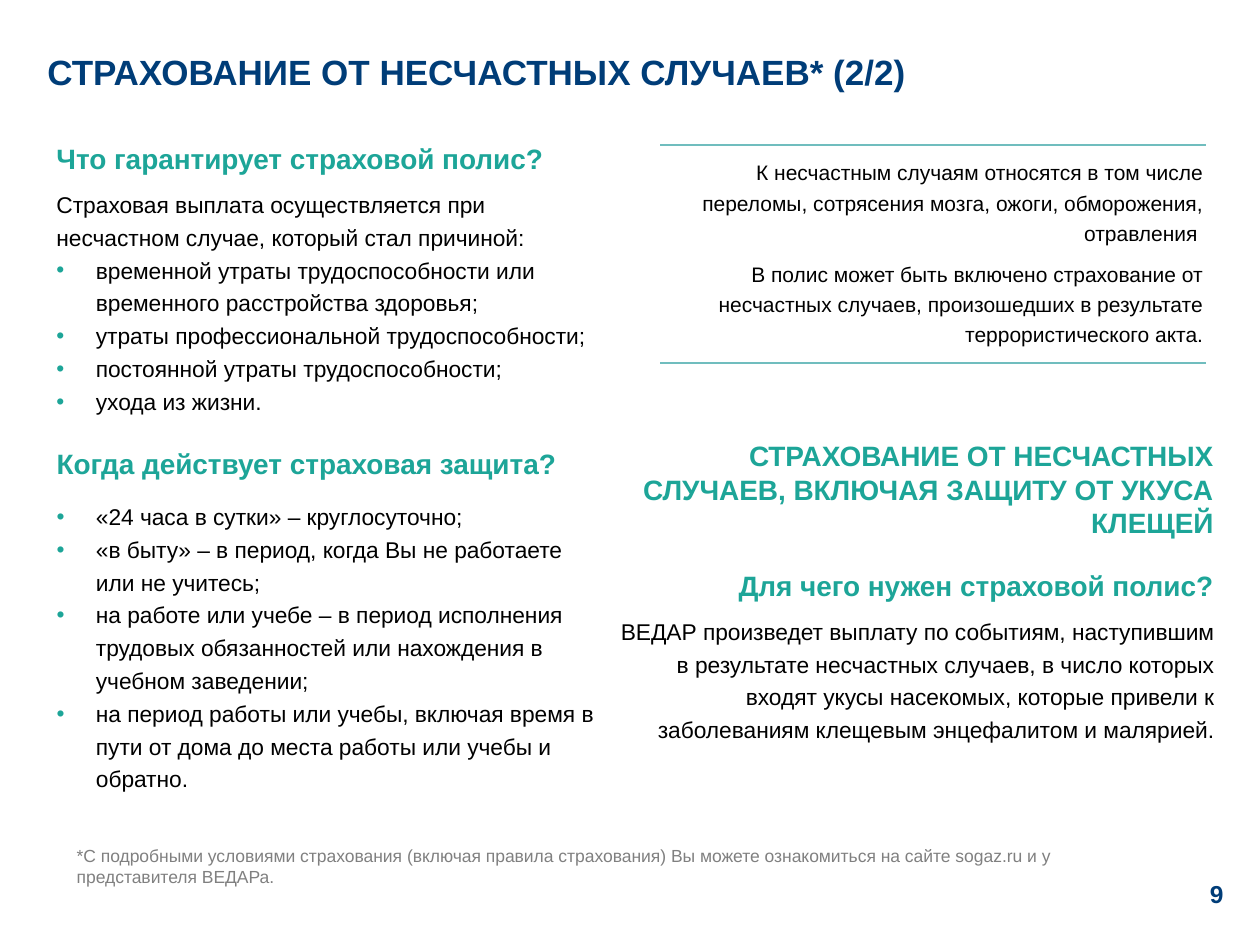
from pptx import Presentation
from pptx.dml.color import RGBColor
from pptx.enum.shapes import MSO_CONNECTOR
from pptx.enum.text import MSO_ANCHOR, PP_ALIGN
from pptx.oxml.ns import qn
from pptx.util import Pt
from lxml import etree

LEFT, RIGHT = PP_ALIGN.LEFT, PP_ALIGN.RIGHT
TOP, MIDDLE = MSO_ANCHOR.TOP, MSO_ANCHOR.MIDDLE
STRAIGHT = MSO_CONNECTOR.STRAIGHT

COLORS = {
    "navy": "003D78",
    "teal": "1DA598",
    "rule": "70BDBE",
    "text": "000000",
    "note": "808080",
}


class SlideWriter:
    font_name = "Arial"
    bullet_indent = 22.5
    loose = 1.2

    def __init__(self, slide):
        self.slide = slide

    def text_box(self, left, top, width, height, anchor=TOP):
        frame = self.slide.shapes.add_textbox(
            Pt(left), Pt(top), Pt(width), Pt(height)).text_frame
        frame.word_wrap = True
        frame.vertical_anchor = anchor
        return frame

    def paragraph(self, frame, text, size, color, bold=False, align=LEFT,
                  spacing=1.0, before=0, after=0, bullet=False):
        """Fill the empty first paragraph of the frame, or append a new one."""
        first = frame.paragraphs[0]
        paragraph = frame.add_paragraph() if first.runs else first
        paragraph.add_run().text = text
        if bullet:
            self.add_bullet(paragraph)
        paragraph.alignment = align
        paragraph.line_spacing = spacing
        paragraph.space_before = Pt(before)
        paragraph.space_after = Pt(after)
        font = paragraph.font
        font.name, font.size, font.bold = self.font_name, Pt(size), bold
        font.color.rgb = RGBColor.from_string(COLORS[color])

    def add_bullet(self, paragraph):
        properties = paragraph._p.get_or_add_pPr()
        indent = Pt(self.bullet_indent)
        properties.set("marL", str(indent))
        properties.set("indent", str(-indent))
        bullet_color = etree.SubElement(properties, qn("a:buClr"))
        etree.SubElement(bullet_color, qn("a:srgbClr"), val=COLORS["teal"])
        etree.SubElement(properties, qn("a:buFont"), typeface=self.font_name)
        etree.SubElement(properties, qn("a:buChar"), char="•")

    def heading(self, frame, text, **style):
        self.paragraph(frame, text, 16, "teal", bold=True, **style)

    def body(self, frame, text, size=13, **style):
        self.paragraph(frame, text, size, "text", spacing=self.loose, **style)

    def bullets(self, frame, items):
        for item in items:
            self.body(frame, item, bullet=True)

    def rule(self, left, right, y):
        line = self.slide.shapes.add_connector(
            STRAIGHT, Pt(left), Pt(y), Pt(right), Pt(y))
        line.line.color.rgb = RGBColor.from_string(COLORS["rule"])
        line.line.width = Pt(0.75)
        etree.SubElement(line._element.spPr, qn("a:effectLst"))


def main():
    presentation = Presentation()
    presentation.slide_width, presentation.slide_height = Pt(720), Pt(540)
    writer = SlideWriter(
        presentation.slides.add_slide(presentation.slide_layouts[6]))

    title = writer.text_box(20, 15.4, 538.5, 51, MIDDLE)
    writer.paragraph(title, "СТРАХОВАНИЕ ОТ НЕСЧАСТНЫХ СЛУЧАЕВ* (2/2)",
                     20, "navy", bold=True)

    guarantees = writer.text_box(25.2, 73.4, 332, 169)
    writer.heading(guarantees, "Что гарантирует страховой полис?",
                   spacing=writer.loose)
    writer.body(guarantees, "Страховая выплата осуществляется при несчастном "
                "случае, который стал причиной:", before=6)
    writer.bullets(guarantees, [
        "временной утраты трудоспособности или временного расстройства здоровья;",
        "утраты профессиональной трудоспособности;",
        "постоянной утраты трудоспособности;",
        "ухода из жизни.",
    ])

    coverage = writer.text_box(25.2, 247.7, 323.3, 211)
    writer.heading(coverage, "Когда действует страховая защита?",
                   spacing=writer.loose, after=10)
    writer.bullets(coverage, [
        "«24 часа в сутки» – круглосуточно;",
        "«в быту» – в период, когда Вы не работаете или не учитесь;",
        "на работе или учебе – в период исполнения трудовых обязанностей "
        "или нахождения в учебном заведении;",
        "на период работы или учебы, включая время в пути от дома до места "
        "работы или учебы и обратно.",
    ])

    for y in (82.8, 207.4):
        writer.rule(377.3, 689, y)
    accidents = writer.text_box(383, 85, 311.8, 118)
    writer.body(accidents, "К несчастным случаям относятся в том числе переломы, "
                "сотрясения мозга, ожоги, обморожения, отравления ",
                size=12, align=RIGHT)
    writer.body(accidents, "В полис может быть включено страхование от несчастных "
                "случаев, произошедших в результате террористического акта.",
                size=12, align=RIGHT, before=6)

    tick_title = writer.text_box(340.6, 247, 360, 65.5)
    writer.heading(tick_title, "СТРАХОВАНИЕ ОТ НЕСЧАСТНЫХ СЛУЧАЕВ, "
                   "ВКЛЮЧАЯ ЗАЩИТУ ОТ УКУСА КЛЕЩЕЙ", align=RIGHT)

    tick_policy = writer.text_box(340.6, 321.1, 360, 108)
    writer.heading(tick_policy, "Для чего нужен страховой полис?",
                   align=RIGHT, after=6)
    writer.body(tick_policy, "ВЕДАР произведет выплату по событиям, наступившим в "
                "результате несчастных случаев, в число которых входят укусы "
                "насекомых, которые привели к заболеваниям клещевым энцефалитом "
                "и малярией.", align=RIGHT)

    footnote = writer.text_box(36.7, 479.5, 635, 31.7)
    writer.paragraph(footnote, "*С подробными условиями страхования (включая "
                     "правила страхования) Вы можете ознакомиться на сайте "
                     "sogaz.ru и у представителя ВЕДАРа.", 10, "note")

    page_number = writer.text_box(649.4, 499, 56.9, 37.4)
    writer.paragraph(page_number, "9", 14, "navy", bold=True, align=RIGHT)

    presentation.save("out.pptx")


if __name__ == "__main__":
    main()
